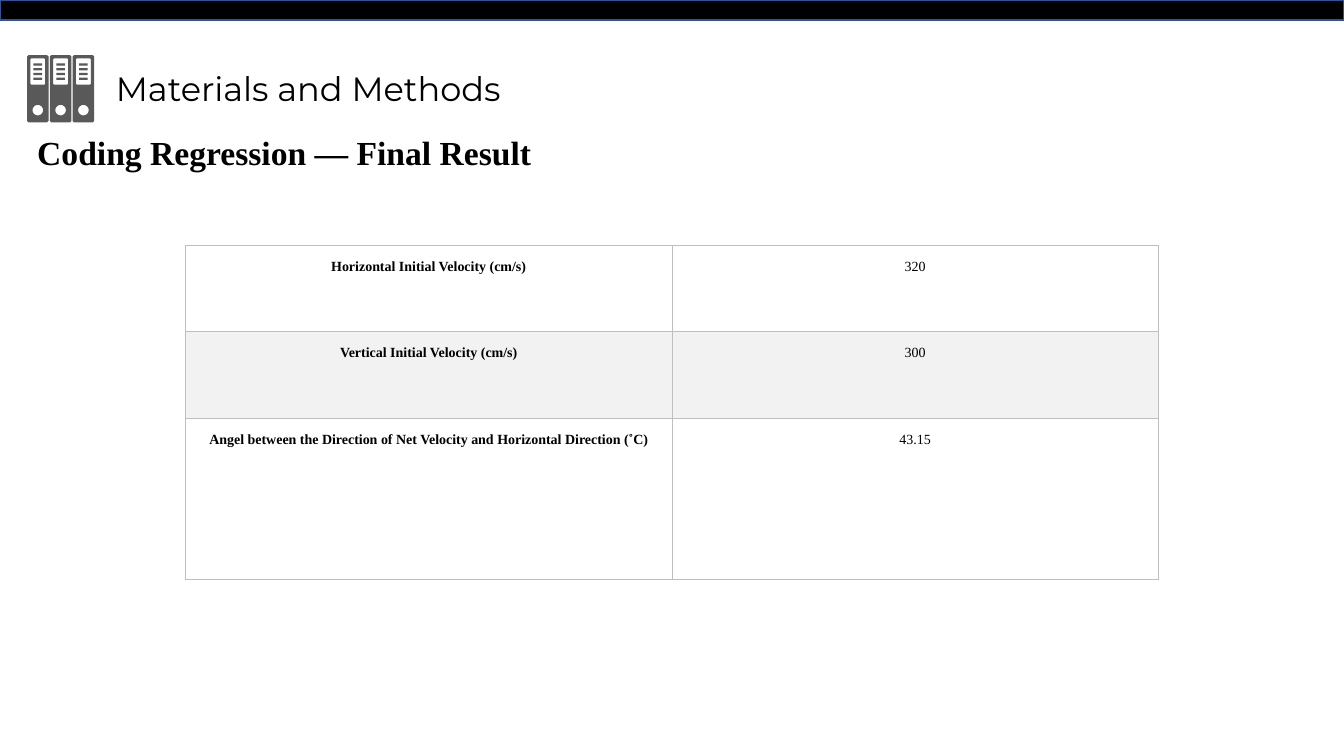
from dataclasses import dataclass
from math import cos, pi, sin

from lxml.etree import SubElement
from pptx import Presentation
from pptx.dml.color import RGBColor
from pptx.enum.shapes import MSO_SHAPE
from pptx.enum.text import MSO_ANCHOR, MSO_AUTO_SIZE, PP_ALIGN
from pptx.oxml.ns import qn
from pptx.util import Pt


@dataclass(frozen=True)
class Theme:
    black: str = "000000"
    white: str = "FFFFFF"
    bar_line: str = "32538F"
    icon: str = "595959"
    border: str = "BFBFBF"
    band: str = "F2F2F2"
    title_font: str = "Montserrat"
    text_font: str = "Times New Roman"
    heading_size: int = 24
    table_size: int = 10


THEME = Theme()

RESULTS = [
    ("Horizontal Initial Velocity (cm/s)", "320"),
    ("Vertical Initial Velocity (cm/s)", "300"),
    ("Angel between the Direction of Net Velocity and Horizontal Direction (˚C)", "43.15"),
]
ROW_HEIGHTS = [62, 62, 115]


def rgb(color):
    return RGBColor.from_string(color)


def add_run(p, text, font, size, bold=False):
    r = p.add_run()
    r.text = text
    r.font.name = font
    r.font.size = Pt(size)
    r.font.bold = bold
    r.font.color.rgb = rgb(THEME.black)


def paint(sp, fill):
    sp.shadow.inherit = False
    sp.fill.solid()
    sp.fill.fore_color.rgb = rgb(fill)


def add_top_bar(s):
    sp = s.shapes.add_shape(MSO_SHAPE.RECTANGLE, Pt(0), Pt(0), Pt(960), Pt(14.4))
    paint(sp, THEME.black)
    sp.line.color.rgb = rgb(THEME.bar_line)
    sp.line.width = Pt(1)


def set_heading(sp, text, font, bold=False):
    tf = sp.text_frame
    tf.word_wrap = True
    tf.auto_size = MSO_AUTO_SIZE.NONE
    tf.vertical_anchor = MSO_ANCHOR.TOP
    tf.margin_left = tf.margin_right = tf.margin_top = tf.margin_bottom = Pt(3.6)
    p = tf.paragraphs[0]
    p.alignment = PP_ALIGN.LEFT
    add_run(p, text, font, THEME.heading_size, bold)


def add_title(s):
    sp = s.shapes.title
    sp.left, sp.top, sp.width, sp.height = Pt(79.2), Pt(44.8), Pt(343.4), Pt(40.3)
    set_heading(sp, "Materials and Methods", THEME.title_font)


def add_subtitle(s):
    sp = s.shapes.add_textbox(Pt(23), Pt(90.7), Pt(885), Pt(33.1))
    set_heading(sp, "Coding Regression — Final Result", THEME.text_font, bold=True)


def box(x, y, w, h, cut=0):
    """Corner points of a rectangle, each corner bevelled by cut."""
    r, b = x + w, y + h
    if not cut:
        return [(x, y), (r, y), (r, b), (x, b)]
    return [(x + cut, y), (r - cut, y), (r, y + cut), (r, b - cut),
            (r - cut, b), (x + cut, b), (x, b - cut), (x, y + cut)]


def disc(cx, cy, radius, steps=16):
    angles = [2 * pi * i / steps for i in range(steps)]
    return [(cx + radius * cos(a), cy + radius * sin(a)) for a in angles]


def binder_outlines(x, y):
    """A binder's cover, then the holes and label lines within it."""
    lines = [box(x + 4.6, y + 5.9 + 3.4 * i, 6.2, 1.6) for i in range(4)]
    return [box(x, y, 15.4, 48, 1), box(x + 2.4, y + 2.4, 10.6, 18.6, 0.5),
            *lines, disc(x + 7.7, y + 39.3, 3.8)]


def add_binder_icon(s):
    outlines = [o for i in range(3) for o in binder_outlines(19.3 + 16.3 * i, 39.4)]
    builder = s.shapes.build_freeform(*(Pt(v) for v in outlines[0][0]))
    for i, outline in enumerate(outlines):
        start, *rest = [(Pt(x), Pt(y)) for x, y in outline]
        if i:
            builder.move_to(*start)
        builder.add_line_segments(rest, close=True)
    sp = builder.convert_to_shape()
    paint(sp, THEME.icon)
    sp.line.fill.background()


def set_borders(cell):
    tcPr = cell._tc.get_or_add_tcPr()
    for i, side in enumerate(("lnL", "lnR", "lnT", "lnB")):
        ln = SubElement(tcPr, qn(f"a:{side}"), w=str(Pt(0.5)))
        fill = SubElement(ln, qn("a:solidFill"))
        SubElement(fill, qn("a:srgbClr"), val=THEME.border)
        tcPr.insert(i, ln)


def fill_cell(cell, text, bold, fill):
    cell.fill.solid()
    cell.fill.fore_color.rgb = rgb(fill)
    set_borders(cell)
    cell.margin_left = cell.margin_right = cell.margin_top = cell.margin_bottom = Pt(4.2)
    p = cell.text_frame.paragraphs[0]
    p.alignment = PP_ALIGN.CENTER
    p.line_spacing = 1.5
    add_run(p, text, THEME.text_font, THEME.table_size, bold)


def add_results_table(s):
    frame = s.shapes.add_table(len(RESULTS), 2, Pt(132.4), Pt(175),
                               Pt(695), Pt(sum(ROW_HEIGHTS)))
    table = frame.table
    table.first_row = table.horz_banding = False
    for row, height in zip(table.rows, ROW_HEIGHTS):
        row.height = Pt(height)
    for i, values in enumerate(RESULTS):
        fill = THEME.band if i % 2 else THEME.white
        for j, text in enumerate(values):
            fill_cell(table.cell(i, j), text, bold=j == 0, fill=fill)


def main():
    prs = Presentation()
    prs.slide_width, prs.slide_height = Pt(960), Pt(540)
    s = prs.slides.add_slide(prs.slide_layouts[5])
    add_top_bar(s)
    add_title(s)
    add_binder_icon(s)
    add_subtitle(s)
    add_results_table(s)
    prs.save("out.pptx")


if __name__ == "__main__":
    main()
